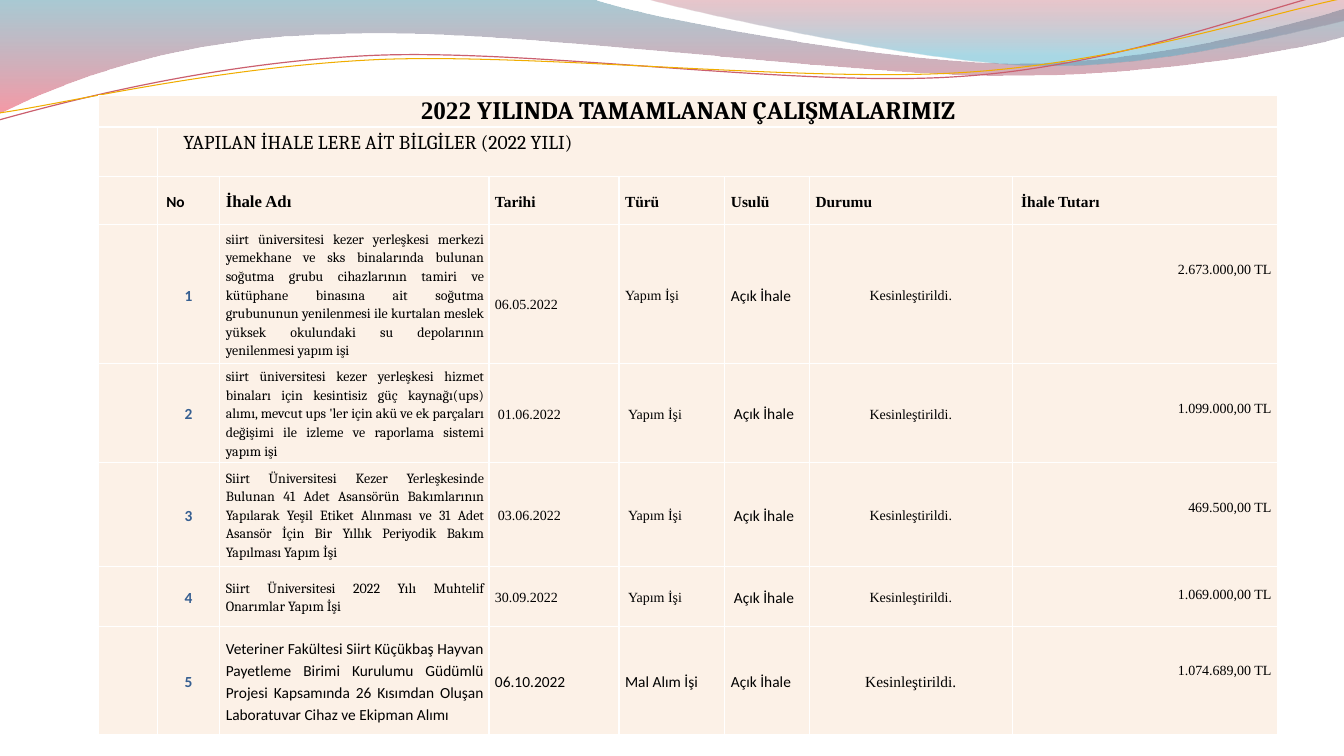
from lxml import etree
from pptx import Presentation
from pptx.dml.color import RGBColor
from pptx.enum import text as t
from pptx.oxml import ns
from pptx.util import Inches, Pt

BLACK = RGBColor(0, 0, 0)
WHITE = RGBColor(255, 255, 255)
CREAM = RGBColor(0xFC, 0xF1, 0xE7)
NAVY = RGBColor(0x36, 0x5F, 0x91)
TEAL = RGBColor(0x3F, 0x8A, 0x9F)
RED = RGBColor(0xEF, 0x44, 0x5B)
WINE = RGBColor(0xB8, 0x42, 0x53)
CYAN = RGBColor(0x42, 0xAB, 0xC7)
ROSE = RGBColor(0xCB, 0x5F, 0x6E)
GOLD = RGBColor(0xF0, 0xAD, 0x00)
TIMES, CAMBRIA, CALIBRI = "Times New Roman", "Cambria", "Calibri"
LEFT, CENTER, RIGHT, FULL = (t.PP_ALIGN.LEFT, t.PP_ALIGN.CENTER,
                             t.PP_ALIGN.RIGHT, t.PP_ALIGN.JUSTIFY)
MIDDLE, TOP, BOTTOM = t.MSO_ANCHOR.MIDDLE, t.MSO_ANCHOR.TOP, t.MSO_ANCHOR.BOTTOM

# Content
TITLE = (("2022 ", TIMES), ("YILINDA TAMAMLANAN ÇALIŞMALARIMIZ", CAMBRIA))
SUBTITLE = "YAPILAN İHALE LERE AİT BİLGİLER (2022 YILI)"
HEADS = ["No", "İhale Adı", "Tarihi", "Türü", "Usulü", "Durumu", "İhale Tutarı"]
TENDERS = [
    ("siirt üniversitesi kezer yerleşkesi merkezi yemekhane ve sks binalarında "
     "bulunan soğutma grubu cihazlarının tamiri ve kütüphane binasına ait soğutma "
     "grubununun yenilenmesi ile kurtalan meslek yüksek okulundaki su depolarının "
     "yenilenmesi yapım işi",
     "06.05.2022", "Yapım İşi", "Açık İhale", "Kesinleştirildi.", "2.673.000,00 TL"),
    ("siirt üniversitesi kezer yerleşkesi hizmet binaları için kesintisiz güç "
     "kaynağı(ups) alımı, mevcut ups 'ler için akü ve ek parçaları değişimi ile "
     "izleme ve raporlama sistemi yapım işi",
     "01.06.2022", "Yapım İşi", "Açık İhale", "Kesinleştirildi.", "1.099.000,00 TL"),
    ("Siirt Üniversitesi Kezer Yerleşkesinde Bulunan 41 Adet Asansörün "
     "Bakımlarının Yapılarak Yeşil Etiket Alınması ve 31 Adet Asansör İçin Bir "
     "Yıllık Periyodik Bakım Yapılması Yapım İşi",
     "03.06.2022", "Yapım İşi", "Açık İhale", "Kesinleştirildi.", "469.500,00 TL"),
    ("Siirt Üniversitesi 2022 Yılı Muhtelif Onarımlar Yapım İşi",
     "30.09.2022", "Yapım İşi", "Açık İhale", "Kesinleştirildi.", "1.069.000,00 TL"),
    ("Veteriner Fakültesi Siirt Küçükbaş Hayvan Payetleme Birimi Kurulumu Güdümlü "
     "Projesi Kapsamında 26 Kısımdan Oluşan Laboratuvar Cihaz ve Ekipman Alımı",
     "06.10.2022", "Mal Alım İşi", "Açık İhale", "Kesinleştirildi.",
     "1.074.689,00 TL"),
]
COLS = [0.58, 0.62, 2.67, 1.29, 1.05, 0.84, 2.01, 2.63]
ROWS = [0.31, 0.49, 0.48, 1.38, 0.98, 1.03, 0.6, 1.07]

# Column looks: font, size, alignment, anchor
LOOKS = [(CALIBRI, 11, CENTER, MIDDLE), (CAMBRIA, 10, FULL, MIDDLE),
         (TIMES, 10, LEFT, MIDDLE), (TIMES, 10, LEFT, MIDDLE),
         (CALIBRI, 11, LEFT, MIDDLE), (TIMES, 10, CENTER, MIDDLE),
         (TIMES, 10, RIGHT, TOP)]
LAST = [(CALIBRI, 11)] * 5 + [(TIMES, 11), (TIMES, 10)]
INDENTS = [(), (3, 4, 5), (3, 4, 5), (4, 5), ()]
DROPS = [0.35, 0.35, 0.35, 0.18, 0.34]

# Waves: points are (x, y) lines or (x1, y1, x2, y2, x, y) curves
BANDS = [
    ([(0, 0), (5.87, -0.01), (6.34, 0.17, 8.85, 0.63, 10.11, 0.63),
      (11.38, 0.63, 12.78, 0.26, 13.33, 0.09), (13.35, 0.36),
      (13.11, 0.44, 11.6, 0.76, 9.94, 0.75), (8.29, 0.75, 5.09, 0.28, 3.43, 0.34),
      (1.72, 0.36, 0.61, 0.83, -0.01, 1.13)],
     [(0, TEAL, 45), (1, RED, 55)]),
    ([(6.39, -0.01), (6.79, 0.11, 9.09, 0.62, 10.25, 0.65),
      (11.41, 0.69, 12.82, 0.32, 13.33, 0.21), (13.33, 0)],
     [(0, WINE, 30), (0.8, CYAN, 45)]),
]
STRANDS = [
    ([(-0.01, 1.19), (0.64, 1.01, 2.11, 0.62, 3.69, 0.55),
      (5.27, 0.48, 7.9, 0.87, 9.5, 0.76), (11.1, 0.66, 12.52, 0.08, 13.31, -0.1)],
     ROSE, 0.85),
    ([(0, 1.12), (0.63, 1.03, 2.18, 0.66, 3.78, 0.59),
      (5.37, 0.53, 7.96, 0.82, 9.55, 0.72), (11.15, 0.62, 12.55, 0.14, 13.34, -0.02)],
     GOLD, 0.75),
]


def draw(slide, parts, close):
    """Build an outline, then join each three curve points into one curve."""
    pts = [(Inches(part[i]), Inches(part[i + 1]))
           for part in parts for i in range(0, len(part), 2)]
    pen = slide.shapes.build_freeform(*pts[0], scale=1.0)
    pen.add_line_segments(pts[1:], close=close)
    shape = pen.convert_to_shape()
    shape.shadow.inherit = False
    steps = iter(list(shape._element.iter(ns.qn("a:lnTo"))))
    for part in parts[1:]:
        curve = next(steps)
        if len(part) == 6:
            curve.tag = ns.qn("a:cubicBezTo")
            for step in (next(steps), next(steps)):
                curve.append(step[0])
                step.getparent().remove(step)
    return shape


def frame(cell):
    """Cream fill, white borders, no insets."""
    cell.fill.solid()
    cell.fill.fore_color.rgb = CREAM
    cell.margin_left = cell.margin_right = cell.margin_top = cell.margin_bottom = 0
    cell.text_frame.paragraphs[0].font.size = Pt(10)
    box = cell._tc.get_or_add_tcPr()
    for i, side in enumerate(("lnL", "lnR", "lnT", "lnB")):
        line = etree.Element(ns.qn("a:" + side), w=str(Pt(1)))
        fill = etree.SubElement(line, ns.qn("a:solidFill"))
        etree.SubElement(fill, ns.qn("a:srgbClr"), val=str(WHITE))
        box.insert(i, line)


def write(cell, words, font, size, align=LEFT, anchor=MIDDLE, bold=False,
          color=BLACK, left=0.06, top=0, bottom=0):
    cell.vertical_anchor = anchor
    cell.margin_left = Inches(left)
    cell.margin_right = Inches(0.05 if align == FULL else 0.06)
    cell.margin_top, cell.margin_bottom = Inches(top), Inches(bottom)
    par = cell.text_frame.paragraphs[0]
    par.text = words
    par.alignment, par.line_spacing = align, 1.15
    par.font.name, par.font.size, par.font.bold = font, Pt(size), bold
    par.font.color.rgb = color


def main():
    prs = Presentation()
    prs.slide_width, prs.slide_height = Inches(13.33), Inches(7.5)
    slide = prs.slides.add_slide(prs.slide_layouts[6])

    # Waves across the top
    for parts, stops in BANDS:
        band = draw(slide, parts, True)
        band.line.fill.background()
        band.fill.gradient()
        band.fill.gradient_angle = 270
        for stop, (place, color, _) in zip(band.fill.gradient_stops, stops):
            stop.position, stop.color.rgb = place, color
        tints = list(band._element.spPr.iter(ns.qn("a:srgbClr")))
        for tint, (_, _, alpha) in zip(tints, stops):
            etree.SubElement(tint, ns.qn("a:alpha"), val=str(alpha * 1000))
    for parts, color, width in STRANDS:
        strand = draw(slide, parts, False)
        strand.fill.background()
        strand.line.color.rgb, strand.line.width = color, Pt(width)

    # Table grid
    table = slide.shapes.add_table(len(ROWS), len(COLS), Inches(0.98), Inches(0.95),
                                   Inches(sum(COLS)), Inches(sum(ROWS))).table
    table.first_row = table.horz_banding = False
    for col, width in zip(table.columns, COLS):
        col.width = Inches(width)
    for row, height in zip(table.rows, ROWS):
        row.height = Inches(height)
    for cell in table.iter_cells():
        frame(cell)

    # Title and subtitle
    table.cell(0, 0).merge(table.cell(0, 7))
    table.cell(1, 1).merge(table.cell(1, 7))
    head = table.cell(0, 0)
    head.vertical_anchor = MIDDLE
    par = head.text_frame.paragraphs[0]
    par.alignment = CENTER
    par.font.size, par.font.bold, par.font.color.rgb = Pt(18), True, BLACK
    for words, font in TITLE:
        run = par.add_run()
        run.text, run.font.name = words, font
    write(table.cell(1, 1), SUBTITLE, CAMBRIA, 14, anchor=BOTTOM, left=0.26, bottom=0.22)

    # Column heads
    for c, words in enumerate(HEADS, 1):
        write(table.cell(2, c), words, CALIBRI if c == 1 else TIMES,
              12 if c == 2 else 11, bold=True, left=0.09 if c in (1, 7) else 0.06)

    # Tenders
    for n, tender in enumerate(TENDERS):
        for c, words in enumerate((str(n + 1),) + tender, 1):
            font, size, align, anchor = LOOKS[c - 1]
            if n == len(TENDERS) - 1:
                font, size = LAST[c - 1]
            drop = DROPS[n] if c == 7 else 0.18 if (n, c) == (0, 3) else 0
            write(table.cell(n + 3, c), words, font, size, align, anchor, c == 1,
                  NAVY if c == 1 else BLACK, 0.09 if c in INDENTS[n] else 0.06, drop)

    prs.save("out.pptx")


if __name__ == "__main__":
    main()
